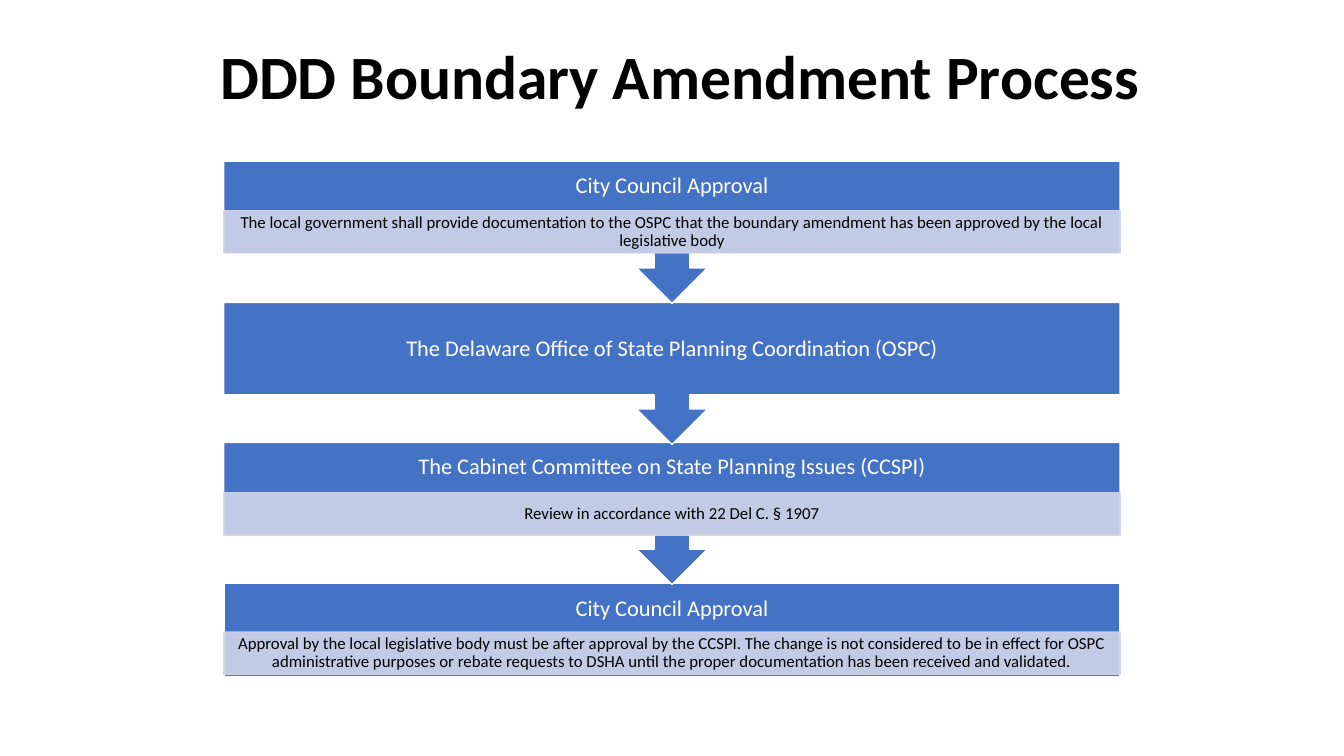
from lxml import etree
from pptx import Presentation
from pptx.dml.color import RGBColor
from pptx.enum.shapes import MSO_SHAPE as Form
from pptx.enum.text import MSO_ANCHOR as Anchor, MSO_AUTO_SIZE as Fit, PP_ALIGN as Align
from pptx.oxml.ns import qn
from pptx.util import Inches, Pt

BLUE = RGBColor(0x44, 0x72, 0xC4)
PALE = RGBColor(0xCF, 0xD5, 0xEA)
WHITE = RGBColor(0xFF, 0xFF, 0xFF)
BLACK = RGBColor(0, 0, 0)

LEFT, WIDTH = 2.22, 8.89
BODY, DROP = 0.92, 1.41  # box height without and with its arrow
HEAD, STRIP = 0.5, 0.42

# top, heading, top of strip, detail
STEPS = [
    (1.6, "City Council Approval", 2.09,
     "The local government shall provide documentation to the OSPC that the "
     "boundary amendment has been approved by the local legislative body"),
    (3.0, "The Delaware Office of State Planning Coordination (OSPC)", None, None),
    (4.39, "The Cabinet Committee on State Planning Issues (CCSPI)", 4.89,
     "Review in accordance with 22 Del C. § 1907"),
    (5.79, "City Council Approval", 6.27,
     "Approval by the local legislative body must be after approval by the CCSPI. "
     "The change is not considered to be in effect for OSPC administrative purposes "
     "or rebate requests to DSHA until the proper documentation has been received "
     "and validated."),
]


class Deck:
    font = "Calibri"

    def __init__(self):
        self.file = Presentation()
        self.file.slide_width = Inches(13.33)
        self.file.slide_height = Inches(7.5)
        self.slide = self.file.slides.add_slide(self.file.slide_layouts[5])

    def set_text(self, shape, text, size, color, pad, bold=False):
        """Set centred text with pad as (side, top and bottom) insets."""
        frame = shape.text_frame
        frame.text = text
        frame.word_wrap = True
        frame.auto_size = Fit.NONE
        frame.vertical_anchor = Anchor.MIDDLE
        frame.margin_left = frame.margin_right = Inches(pad[0])
        frame.margin_top = frame.margin_bottom = Inches(pad[1])
        line = frame.paragraphs[0]
        line.alignment = Align.CENTER
        line.line_spacing = 0.9
        line.font.name = self.font
        line.font.size = Pt(size)
        line.font.bold = bold
        line.font.color.rgb = color

    def title(self, text):
        shape = self.slide.shapes.title
        shape.left, shape.top = Inches(1), Inches(0.06)
        shape.width, shape.height = Inches(11.5), Inches(1.45)
        self.set_text(shape, text, 44, BLACK, (0.1, 0.05), bold=True)

    def block(self, form, top, height, fill, edge):
        shape = self.slide.shapes.add_shape(
            form, Inches(LEFT), Inches(top), Inches(WIDTH), Inches(height))
        shape.shadow.inherit = False
        shape.fill.solid()
        shape.fill.fore_color.rgb = fill
        shape.line.color.rgb = edge
        shape.line.width = Pt(1)
        return shape

    def label(self, text, top, height):
        box = self.slide.shapes.add_textbox(
            Inches(LEFT), Inches(top), Inches(WIDTH), Inches(height))
        self.set_text(box, text, 16, WHITE, (0.12, 0.12))

    def strip(self, text, top):
        shape = self.block(Form.RECTANGLE, top, STRIP, PALE, PALE)
        for color in shape.element.spPr.iter(qn("a:srgbClr")):
            etree.SubElement(color, qn("a:alpha")).set("val", "90000")
        self.set_text(shape, text, 12, BLACK, (0.09, 0.02))

    def step(self, top, head, low, detail, last):
        if last:
            self.block(Form.RECTANGLE, top, BODY, BLUE, WHITE)
        else:
            arrow = self.block(Form.UP_ARROW_CALLOUT, top, DROP, BLUE, WHITE)
            arrow.rotation = 180
        self.label(head, top, HEAD if detail else BODY)
        if detail:
            self.strip(detail, low)


def main():
    deck = Deck()
    deck.title("DDD Boundary Amendment Process")
    # Later steps lie behind, so each arrow tip overlaps the next box
    for step in reversed(STEPS):
        deck.step(*step, last=step is STEPS[-1])
    deck.file.save("out.pptx")


if __name__ == "__main__":
    main()
